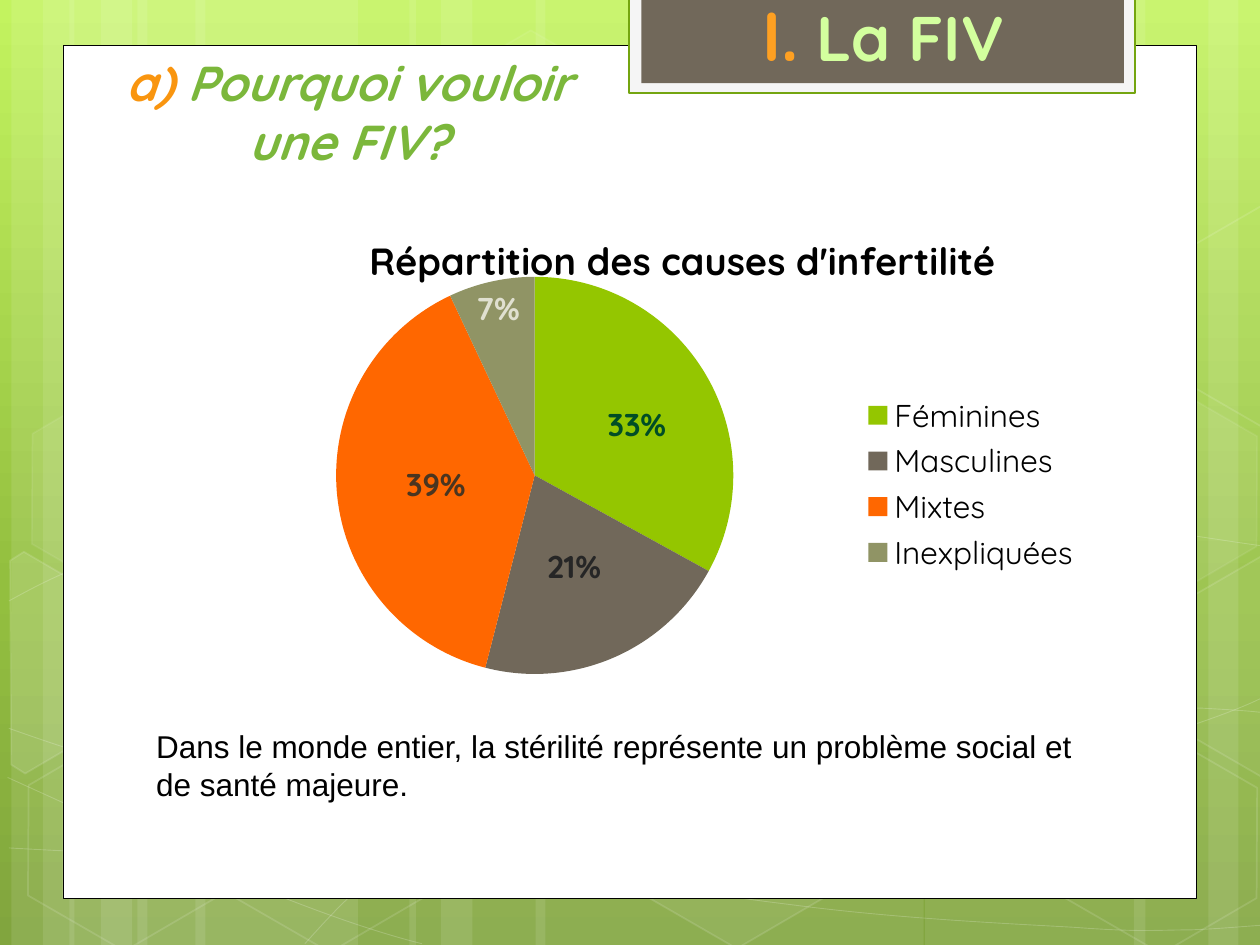
from copy import deepcopy
from pptx import Presentation
from pptx.chart.data import CategoryChartData
from pptx.dml.color import RGBColor
from pptx.enum.chart import XL_CHART_TYPE, XL_LABEL_POSITION, XL_LEGEND_POSITION
from pptx.enum.shapes import MSO_SHAPE
from pptx.enum.text import MSO_ANCHOR, MSO_AUTO_SIZE, PP_ALIGN
from pptx.oxml import parse_xml
from pptx.oxml.ns import nsdecls, qn
from pptx.util import Cm, Pt

WHITE = "FFFFFF"
STRIPES = [(1.09, 1.75), (0.09, 0.5), (0.34, 0.83), (1.55, 1.75),
           (0.55, 0.5), (0.8, 0.83), (7.34, 1.75), (9.59, 0.5),
           (9, 0.83), (4.25, 3.08), (3.25, 0.5), (3.5, 0.83)]
WAVES = [
    [(0.07, 6.73), (0.61, 6.76), (1.15, 6.79), (1.9, 6.78), (2.65, 6.77),
     (3.58, 6.75), (4.58, 6.65), (5.58, 6.55), (7, 6.36), (7.92, 6.17),
     (8.83, 5.98), (9.77, 5.68), (10.07, 5.51)],
    [(0.07, 4.77), (0.36, 4.61), (0.65, 4.46), (1.21, 4.31), (1.78, 4.16),
     (2.59, 3.94), (3.47, 3.87), (4.36, 3.8), (5.44, 3.79), (6.54, 3.87),
     (7.64, 3.95), (9.47, 4.26), (10.07, 4.34)],
    [(0.06, 6.17), (1.27, 6.72), (2.47, 7.27), (3.35, 7.49)],
    [(0.07, 5.78), (0.38, 5.89), (0.7, 6), (1.28, 6.16), (1.86, 6.31),
     (2.73, 6.56), (3.57, 6.73), (4.4, 6.9), (5.45, 7.08), (6.28, 7.18),
     (7.11, 7.29), (8, 7.33), (8.53, 7.36), (9.06, 7.4), (9.19, 7.38),
     (9.45, 7.38), (9.71, 7.37), (9.89, 7.35), (10.07, 7.34)],
    [(2.42, 7.49), (2.6, 7.29), (2.78, 7.09), (3.02, 6.91), (3.26, 6.72),
     (3.6, 6.53), (3.88, 6.39), (4.16, 6.25), (4.33, 6.19), (4.69, 6.09),
     (5.06, 5.99), (5.73, 5.85), (6.08, 5.78), (6.44, 5.71), (6.49, 5.71),
     (6.8, 5.69), (7.11, 5.66), (7.6, 5.63), (7.94, 5.62), (8.29, 5.61),
     (8.86, 5.62), (8.86, 5.62), (9.08, 5.62), (9.3, 5.62), (9.53, 5.62),
     (9.71, 5.63), (9.88, 5.64), (9.97, 5.65), (10.06, 5.66), (10.03, 5.65),
     (10.06, 5.66)],
]
HEXES = [(3.34, 0.36, 4, 8), (4.97, 5.89, 6, 12), (0.11, 5.91, 0, 12),
         (0.14, 3.12, 7, 8), (1.74, 5.92, 0, 12), (7.53, 4.53, 10, 12),
         (8.34, 5.93, 0, 12), (8.34, 3.14, 7, 8)]
EDGES = [
    ([(0.08, 4.45), (0.19, 4.38), (0.96, 4.83), (0.95, 5.7), (0.2, 6.14),
      (0.09, 6.07)], 10),
    ([(9.26, 4.85), (10.02, 4.41), (10.09, 4.46), (10.09, 6.13),
      (10.02, 6.17), (9.26, 5.73)], 4),
    ([(9.26, 2.07), (10.02, 1.63), (10.1, 1.68), (10.09, 3.35),
      (10.02, 3.39), (9.26, 2.95)], 0),
]
CAUSES = [("Féminines", 0.33, "94C600", "004D26", 0.02),
          ("Masculines", 0.21, "71685A", "262626", 0),
          ("Mixtes", 0.39, "FF6700", "4A3520", 0),
          ("Inexpliquées", 0.07, "909465", "E0E0D0", -0.02)]


def rgb(code):
    return RGBColor.from_string(code)


def cm(*nums):
    return [Cm(num * 2.54) for num in nums]


def fade(shape, route, share):
    for tint in shape.element.spPr.xpath(route + "a:solidFill/a:srgbClr"):
        tint.append(parse_xml(f'<a:alpha {nsdecls("a")} val="{share * 1000}"/>'))


def paint(shape, fill=None, line=None, width=1, alpha=100, veil=100):
    shape.shadow.inherit = False
    if fill and alpha:
        shape.fill.solid()
        shape.fill.fore_color.rgb = rgb(fill)
        fade(shape, "", alpha)
    else:
        shape.fill.background()
    if line:
        shape.line.color.rgb = rgb(line)
        shape.line.width = Pt(width)
        fade(shape, "a:ln/", veil)
    else:
        shape.line.fill.background()


def block(slide, box, kind=MSO_SHAPE.RECTANGLE, **look):
    shape = slide.shapes.add_shape(kind, *cm(*box))
    paint(shape, **look)
    return shape


def trace(slide, dots, close, **look):
    first, *rest = [cm(*dot) for dot in dots]
    form = slide.shapes.build_freeform(*first)
    form.add_line_segments(rest, close=close)
    shape = form.convert_to_shape()
    paint(shape, **look)
    return shape


def bend(shape):
    lines = shape.element.spPr.xpath(".//a:lnTo")
    for i in range(0, len(lines), 3):
        curve = parse_xml(f'<a:cubicBezTo {nsdecls("a")}/>')
        lines[i].addprevious(curve)
        for line in lines[i:i + 3]:
            curve.append(line[0])
            line.getparent().remove(line)


def shade(page):
    fill = page.background.fill
    fill.gradient()
    fill.gradient_angle = 270
    last = page.element.xpath(".//p:bg//a:gs")[-1]
    last.addnext(deepcopy(last))
    for stop, (place, code) in zip(fill.gradient_stops, [
            (0, "C3F35F"), (0.62, "93BF3F"), (1, "81A53E")]):
        stop.position = place
        stop.color.rgb = rgb(code)


def backdrop(slide):
    for left, width in STRIPES:
        block(slide, (left, 0, width, 7.5), fill=WHITE, alpha=10)
    for knots in WAVES:
        bend(trace(slide, knots, False, line=WHITE, width=0.5, veil=20))
    for left, top, alpha, veil in HEXES:
        shape = block(slide, (left, top, 1.75, 1.52), MSO_SHAPE.HEXAGON,
                      fill=WHITE, alpha=alpha, line=WHITE, veil=veil)
        shape.adjustments[0] = 0.285
        shape.rotation = 30
    for dots, alpha in EDGES:
        trace(slide, dots, True, fill=WHITE, alpha=alpha, line=WHITE, veil=12)
    block(slide, (0.5, 0.36, 9, 6.77), fill=WHITE, line="000000", width=0.5)
    block(slide, (4.99, -0.03, 4.02, 0.77), fill="F5F5F5", line="74A510", width=1.25)
    block(slide, (5.09, -0.02, 3.83, 0.68), fill="71685A")


def settle(slide, layout):
    shade(layout)
    tree = layout.shapes._spTree
    for spot, shape in enumerate(
            [item for item in slide.shapes if not item.is_placeholder], 2):
        tree.insert(spot, shape.element)


def write(shape, runs, face, align=PP_ALIGN.LEFT, anchor=MSO_ANCHOR.TOP,
          bold=False, slant=False):
    frame = shape.text_frame
    frame.word_wrap = True
    frame.auto_size = MSO_AUTO_SIZE.NONE
    frame.vertical_anchor = anchor
    para = frame.paragraphs[0]
    para.alignment = align
    font = para.font
    font.name, font.bold, font.italic = face, bold, slant
    for text, size, code in runs:
        run = para.add_run()
        run.text = text
        run.font.size = Pt(size)
        run.font.color.rgb = rgb(code)


def style(font, size, code, bold=False):
    font.name, font.size, font.bold = "Quicksand", Pt(size), bold
    font.color.rgb = rgb(code)


def place(parent, after=None, **spots):
    for old in parent.findall(qn("c:layout")):
        parent.remove(old)
    tags = "".join(f'<c:{key} val="{val}"/>' for key, val in spots.items())
    node = parse_xml(f'<c:layout {nsdecls("c")}><c:manualLayout>{tags}'
                     '</c:manualLayout></c:layout>')
    parent.insert(0 if after is None else parent.index(after) + 1, node)


def tag(label, nudge):
    place(label, label.find(qn("c:idx")), x=nudge, y=0)


def pie(slide):
    name = "Répartition des causes d'infertilité"
    data = CategoryChartData(number_format="0%")
    data.categories = [cause[0] for cause in CAUSES]
    data.add_series(name, [cause[1] for cause in CAUSES])
    chart = slide.shapes.add_chart(
        XL_CHART_TYPE.PIE, *cm(2.01, 1.62, 6.67, 4.44), data).chart
    style(chart.font, 18, "000000")
    chart.has_title = True
    para = chart.chart_title.text_frame.paragraphs[0]
    para.text = name
    style(para.font, 21.6, "000000", True)
    title = chart.chart_title._element
    place(title, title.find(qn("c:tx")), xMode="edge", yMode="edge", x=0.13, y=0.04)
    chart.has_legend = True
    chart.legend.position = XL_LEGEND_POSITION.RIGHT
    chart.legend.include_in_layout = False
    style(chart.legend.font, 18, "000000")
    plot = chart.plots[0]
    plot.vary_by_categories = True
    place(plot._element.getparent(), layoutTarget="inner", xMode="edge",
          yMode="edge", x=0.05, y=0.13, w=0.57, h=0.71)
    for i, (_, share, code, ink, _) in enumerate(CAUSES):
        point = plot.series[0].points[i]
        point.format.fill.solid()
        point.format.fill.fore_color.rgb = rgb(code)
        label = point.data_label
        style(label.font, 18, ink, True)
        label.position = (XL_LABEL_POSITION.INSIDE_END if share < 0.1
                          else XL_LABEL_POSITION.CENTER)
    labels = plot._element.xpath(".//c:dLbl")
    for label, cause in zip(labels, CAUSES):
        if cause[-1]:
            tag(label, cause[-1])
    for label in labels[:3]:
        label.find(qn("c:showVal")).set("val", "0")
        label.find(qn("c:showPercent")).set("val", "1")


def main():
    deck = Presentation()
    deck.slide_width, deck.slide_height = cm(10, 7.5)
    layout = deck.slide_layouts[5]
    slide = deck.slides.add_slide(layout)
    backdrop(slide)
    settle(slide, layout)
    title = slide.shapes.title
    title.left, title.top, title.width, title.height = cm(5.08, 0, 3.86, 0.65)
    write(title, [("I.", 39.6, "FEA022"), (" La FIV", 36, "D3FF9E")],
          "Quicksand", PP_ALIGN.CENTER, MSO_ANCHOR.BOTTOM, bold=True)
    write(slide.shapes.add_textbox(*cm(0.53, 0.37, 4.47, 1.04)),
          [("a) ", 28, "F9950F"), ("Pourquoi vouloir une FIV?", 28, "7BB73B")],
          "Quicksand", PP_ALIGN.CENTER, bold=True, slant=True)
    write(slide.shapes.add_textbox(*cm(1.14, 5.72, 7.72, 0.7)),
          [("Dans le monde entier, la stérilité représente un problème social "
            "et de santé majeure.", 18, "000000")], "Arial")
    pie(slide)
    deck.save("out.pptx")


if __name__ == "__main__":
    main()
